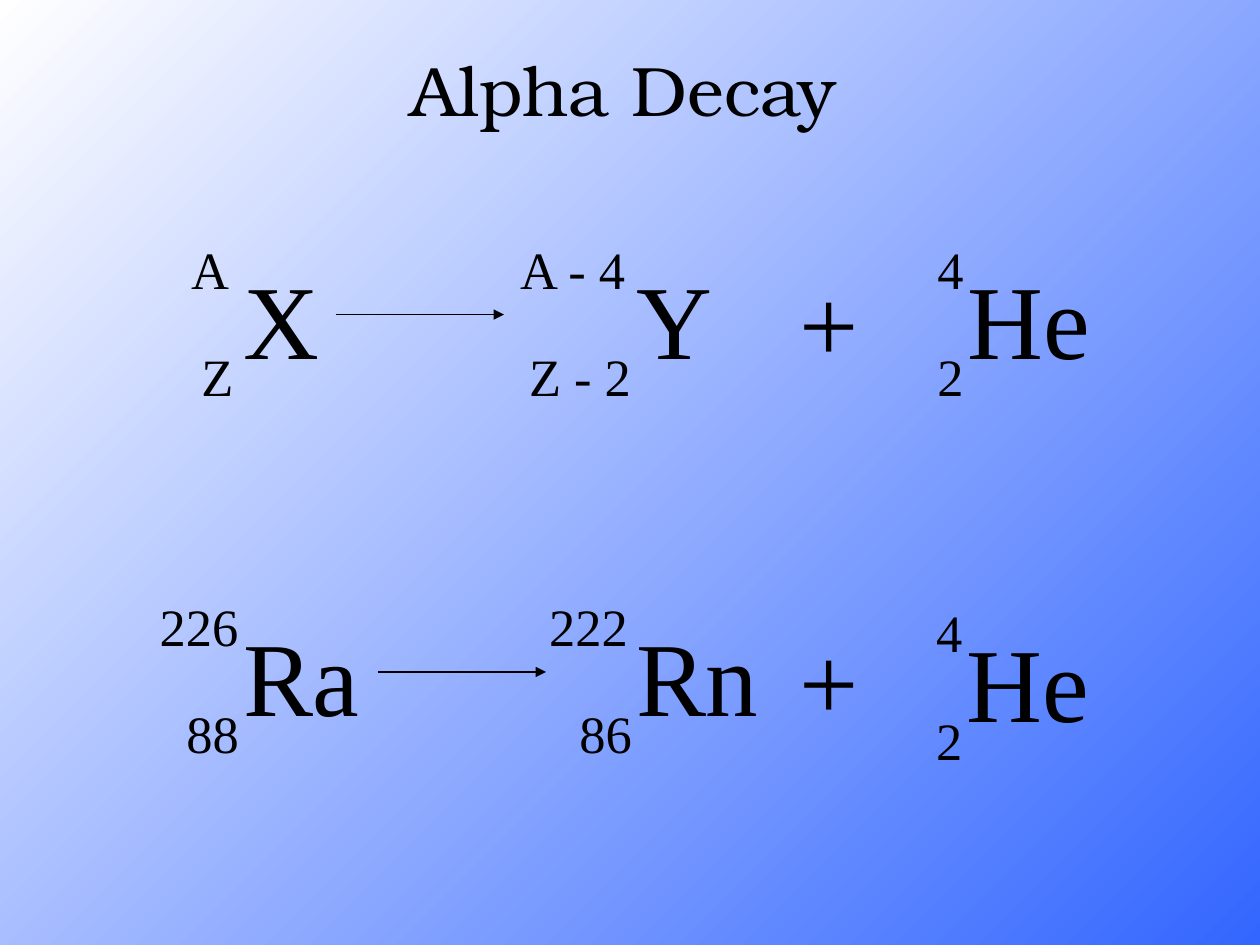
from lxml import etree
from pptx import Presentation
from pptx import util as u
from pptx.dml import color
from pptx.enum import shapes, text
from pptx.oxml import ns

INK = "000000"
SYMBOL = {"name": "Times New Roman", "size": u.Pt(60)}
SCRIPT = {"name": "Times New Roman", "size": u.Pt(30)}
TITLE = {"name": "TeX Gyre Bonum", "size": u.Pt(40)}
FRAME = {"word_wrap": False, "auto_size": text.MSO_AUTO_SIZE.SHAPE_TO_FIT_TEXT}


def rgb(value):
    """Return the colour for a hex string."""
    return color.RGBColor.from_string(value)


def apply(target, values):
    """Set each attribute named in values on the target."""
    for name, value in values.items():
        setattr(target, name, value)


def write(box, words, font):
    """Put one formatted line of text into a box."""
    frame = box.text_frame
    apply(frame, FRAME)
    span = frame.paragraphs[0].add_run()
    span.text = words
    apply(span.font, font)
    span.font.color.rgb = rgb(INK)


def label(group, words, left, top, width, font):
    """Add a text box whose height follows from its font size."""
    height = u.Pt(font["size"].pt * 1.2 + 7.2)
    box = group.shapes.add_textbox(u.Pt(left), u.Pt(top), u.Pt(width), height)
    write(box, words, font)


def nuclide(group, left, top, symbol, mass, number):
    """Place a symbol with its mass number above and atomic number below."""
    for part, drop, font in ((symbol, 10, SYMBOL), (mass, 0, SCRIPT), (number, 61.2, SCRIPT)):
        words, offset, width = part
        label(group, words, left + offset, top + drop, width, font)


def arrow(group, left, top, width):
    """Draw a thin horizontal reaction arrow."""
    line = group.shapes.add_connector(
        shapes.MSO_CONNECTOR.STRAIGHT, u.Pt(left), u.Pt(top), u.Pt(left + width), u.Pt(top))
    line.line.width = u.Pt(0.75)
    line.line.color.rgb = rgb(INK)
    etree.SubElement(line.line._get_or_add_ln(), ns.qn("a:tailEnd"), type="triangle")
    etree.SubElement(line._element.spPr, ns.qn("a:effectLst"))


def reaction(page, left, top, parent, daughter, arrow_left, helium):
    """Place one decay equation as a group from its top left corner."""
    group = page.shapes.add_group_shape()
    nuclide(group, left, top, *parent)
    nuclide(group, left, top, *daughter)
    arrow(group, left + arrow_left, top + 48, 96)
    label(group, "+", left + 366, top + 12, 48, SYMBOL)
    shift, drop = helium
    nuclide(group, left + 444.5 + shift, top + drop,
            ("He", 17.3, 84.2), ("4", 0, 29.5), ("2", 0, 29.5))


def heading(page, left, top, width, height):
    """Move the title placeholder into its box and fill it."""
    title = page.shapes.title
    apply(title, {"left": u.Pt(left), "top": u.Pt(top),
                  "width": u.Pt(width), "height": u.Pt(height)})
    write(title, "Alpha Decay", TITLE)


def backdrop(page):
    """Fill the background with a diagonal gradient."""
    fill = page.background.fill
    fill.gradient()
    fill.gradient_angle = 315
    for stop, place, value in zip(fill.gradient_stops, (0, 1), ("FFFFFF", "3366FF")):
        stop.position = place
        stop.color.rgb = rgb(value)


def main():
    """Build the slide and save it."""
    deck = Presentation()
    deck.slide_width, deck.slide_height = u.Pt(720), u.Pt(540)
    page = deck.slides.add_slide(deck.slide_layouts[5])
    backdrop(page)
    heading(page, 226.8, 23, 259.2, 55.4)
    reaction(page, 84, 131.8,
             (("X", 47.8, 57.6), ("A", 18.2, 36), ("Z", 24, 33.1)),
             (("Y", 272.4, 57.6), ("A - 4", 206.2, 76.3), ("Z - 2", 211.2, 72.7)),
             108, (0, 0))
    reaction(page, 84, 336,
             (("Ra", 47.8, 81.4), ("226", 0.2, 59.8), ("88", 15.4, 44.6)),
             (("Rn", 272.4, 84.2), ("222", 222.7, 59.8), ("86", 240, 44.6)),
             132, (-0.7, 3.6))
    deck.save("out.pptx")


if __name__ == "__main__":
    main()
